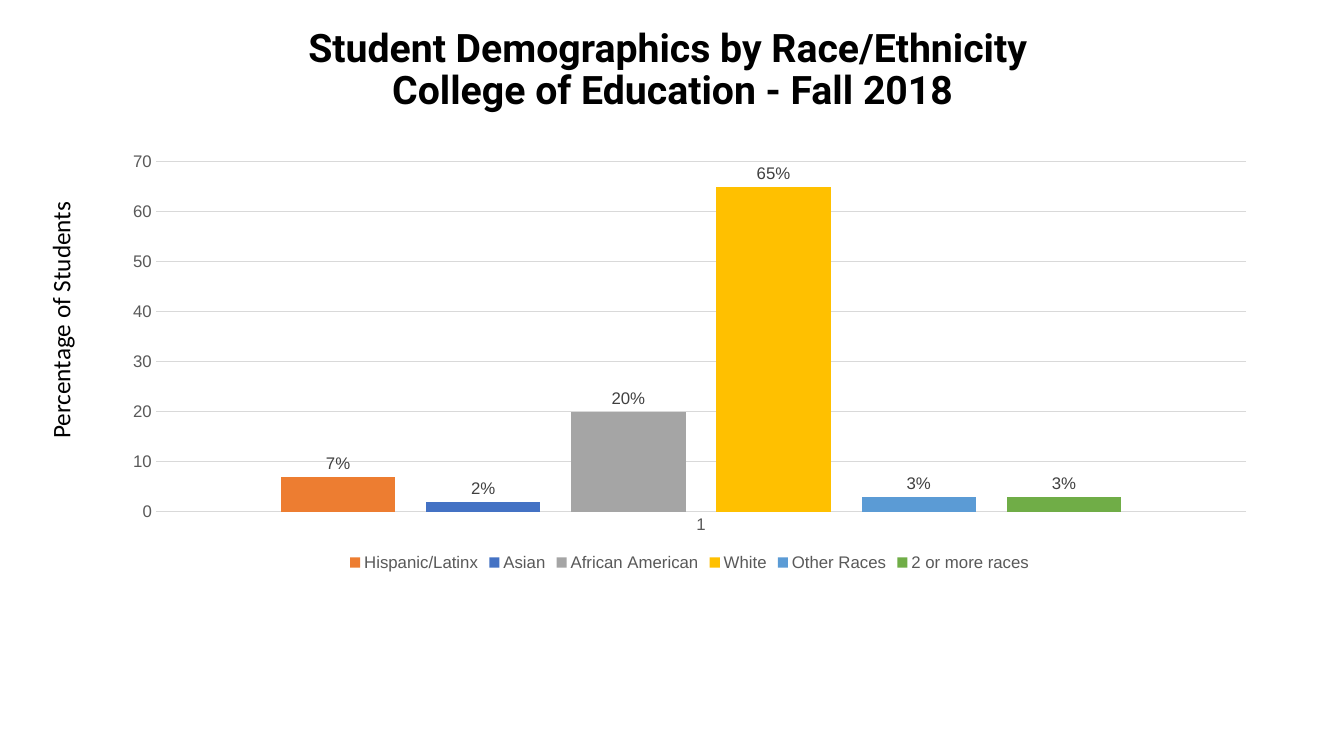
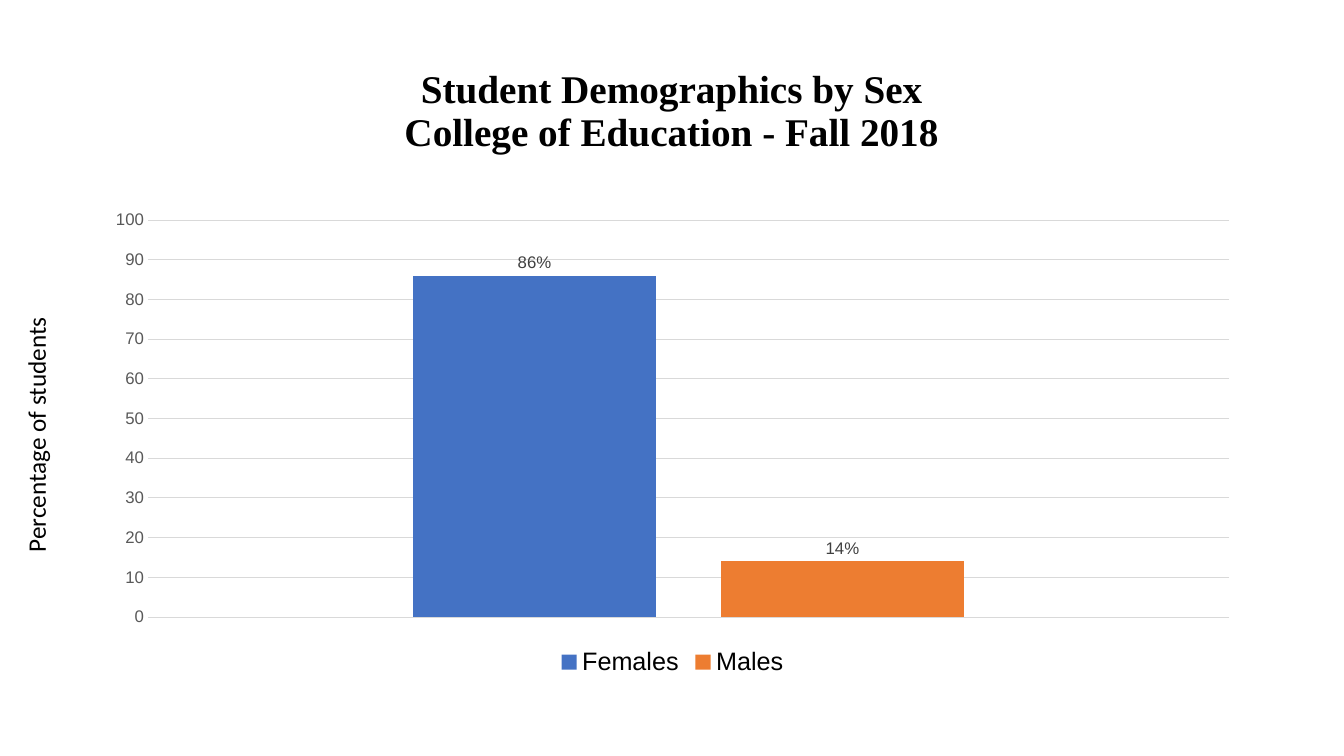
from dataclasses import dataclass
from typing import NamedTuple

from pptx import Presentation
from pptx.chart.axis import ValueAxis
from pptx.chart.chart import Chart
from pptx.chart.data import CategoryChartData
from pptx.dml.color import RGBColor
from pptx.enum.chart import XL_CHART_TYPE as ChartType
from pptx.enum.chart import XL_LABEL_POSITION as LabelPosition
from pptx.enum.chart import XL_LEGEND_POSITION as LegendPosition
from pptx.enum.chart import XL_TICK_MARK as TickMark
from pptx.enum.text import MSO_ANCHOR, MSO_AUTO_SIZE, PP_ALIGN
from pptx.slide import Slide
from pptx.text.text import Font
from pptx.util import Emu, Pt

EMU_PER_PX = 9144  # 100 px to the inch
TITLE_ONLY = 5


def px(length: int) -> Emu:
    return Emu(length * EMU_PER_PX)


class Box(NamedTuple):
    left: int
    top: int
    width: int
    height: int

    def emu(self) -> tuple[Emu, ...]:
        return tuple(px(length) for length in self)


@dataclass(frozen=True)
class Theme:
    black: str = "000000"
    axis_text: str = "595959"
    label_text: str = "404040"
    grid: str = "D9D9D9"
    orange: str = "ED7D31"
    blue: str = "4472C4"
    gray: str = "A5A5A5"
    gold: str = "FFC000"
    light_blue: str = "5B9BD5"
    green: str = "70AD47"
    chart_font: str = "Arial"
    caption_font: str = "Calibri"
    title_size: int = 28
    caption_size: int = 18
    chart_size: int = 12


THEME = Theme()


class Group(NamedTuple):
    name: str
    percent: int
    color: str


@dataclass(frozen=True)
class ChartSlide:
    title: str
    title_font: str
    title_box: Box
    caption: str
    caption_box: Box
    chart_box: Box
    axis_maximum: int
    show_category: bool
    legend_size: int
    legend_color: str
    groups: tuple[Group, ...]


CHART_SLIDES = (
    ChartSlide(
        title="Student Demographics by Race/Ethnicity \vCollege of Education - Fall 2018",
        title_font="Roboto",
        title_box=Box(92, -2, 1150, 145),
        caption="Percentage of Students",
        caption_box=Box(-80, 285, 280, 40),
        chart_box=Box(109, 143, 1150, 428),
        axis_maximum=70,
        show_category=True,
        legend_size=THEME.chart_size,
        legend_color=THEME.axis_text,
        groups=(
            Group("Hispanic/Latinx", 7, THEME.orange),
            Group("Asian", 2, THEME.blue),
            Group("African American", 20, THEME.gray),
            Group("White", 65, THEME.gold),
            Group("Other Races", 3, THEME.light_blue),
            Group("2 or more races", 3, THEME.green),
        ),
    ),
    ChartSlide(
        title="Student Demographics by Sex\vCollege of Education - Fall 2018",
        title_font="Times New Roman",
        title_box=Box(36, 40, 1260, 143),
        caption="Percentage of students",
        caption_box=Box(-84, 394, 263, 64),
        chart_box=Box(92, 200, 1150, 476),
        axis_maximum=100,
        show_category=False,
        legend_size=18,
        legend_color=THEME.black,
        groups=(
            Group("Females", 86, THEME.blue),
            Group("Males", 14, THEME.orange),
        ),
    ),
)


def style_font(font: Font, name: str, size: int, color: str, bold: bool = False) -> None:
    font.name = name
    font.size = Pt(size)
    font.bold = bold
    font.color.rgb = RGBColor.from_string(color)


def add_title(slide: Slide, content: ChartSlide) -> None:
    title = slide.shapes.title
    title.left, title.top, title.width, title.height = content.title_box.emu()
    frame = title.text_frame
    frame.auto_size = MSO_AUTO_SIZE.NONE
    frame.vertical_anchor = MSO_ANCHOR.MIDDLE
    paragraph = frame.paragraphs[0]
    paragraph.text = content.title
    paragraph.alignment = PP_ALIGN.CENTER
    paragraph.line_spacing = 0.9
    style_font(paragraph.font, content.title_font, THEME.title_size, THEME.black, bold=True)


def add_axis_caption(slide: Slide, content: ChartSlide) -> None:
    caption = slide.shapes.add_textbox(*content.caption_box.emu())
    caption.rotation = 270
    frame = caption.text_frame
    frame.word_wrap = True
    frame.auto_size = MSO_AUTO_SIZE.SHAPE_TO_FIT_TEXT
    paragraph = frame.paragraphs[0]
    paragraph.text = content.caption
    style_font(paragraph.font, THEME.caption_font, THEME.caption_size, THEME.black)


def style_value_axis(axis: ValueAxis, maximum: int) -> None:
    axis.minimum_scale = 0
    axis.maximum_scale = maximum
    axis.major_unit = 10
    axis.major_tick_mark = TickMark.NONE
    axis.format.line.fill.background()
    grid_line = axis.major_gridlines.format.line
    grid_line.width = Pt(0.75)
    grid_line.color.rgb = RGBColor.from_string(THEME.grid)
    style_font(axis.tick_labels.font, THEME.chart_font, THEME.chart_size, THEME.axis_text)


def style_category_axis(chart: Chart, visible: bool) -> None:
    axis = chart.category_axis
    axis.visible = visible
    if visible:
        axis.major_tick_mark = TickMark.NONE
        axis.format.line.width = Pt(0.75)
        axis.format.line.color.rgb = RGBColor.from_string(THEME.grid)
        style_font(axis.tick_labels.font, THEME.chart_font, THEME.chart_size, THEME.axis_text)


def style_columns(chart: Chart, groups: tuple[Group, ...]) -> None:
    plot = chart.plots[0]
    plot.vary_by_categories = False
    plot.gap_width = 219
    plot.overlap = -27
    for series, group in zip(plot.series, groups):
        series.format.fill.solid()
        series.format.fill.fore_color.rgb = RGBColor.from_string(group.color)
        labels = series.data_labels
        labels.show_value = True
        labels.number_format = '0"%"'
        labels.number_format_is_linked = False
        labels.position = LabelPosition.OUTSIDE_END
        style_font(labels.font, THEME.chart_font, THEME.chart_size, THEME.label_text)


def add_column_chart(slide: Slide, content: ChartSlide) -> None:
    data = CategoryChartData()
    data.categories = ["1"]
    for group in content.groups:
        data.add_series(group.name, [group.percent])
    chart = slide.shapes.add_chart(
        ChartType.COLUMN_CLUSTERED, *content.chart_box.emu(), data
    ).chart
    chart.has_title = False
    style_font(chart.font, THEME.chart_font, 10, THEME.black)
    style_value_axis(chart.value_axis, content.axis_maximum)
    style_category_axis(chart, content.show_category)
    style_columns(chart, content.groups)
    chart.has_legend = True
    chart.legend.position = LegendPosition.BOTTOM
    chart.legend.include_in_layout = False
    style_font(chart.legend.font, THEME.chart_font, content.legend_size, content.legend_color)


def main() -> None:
    presentation = Presentation()
    presentation.slide_width = px(1333)
    presentation.slide_height = px(750)
    for content in CHART_SLIDES:
        slide = presentation.slides.add_slide(presentation.slide_layouts[TITLE_ONLY])
        add_title(slide, content)
        add_column_chart(slide, content)
        add_axis_caption(slide, content)
    presentation.save("out.pptx")


if __name__ == "__main__":
    main()
